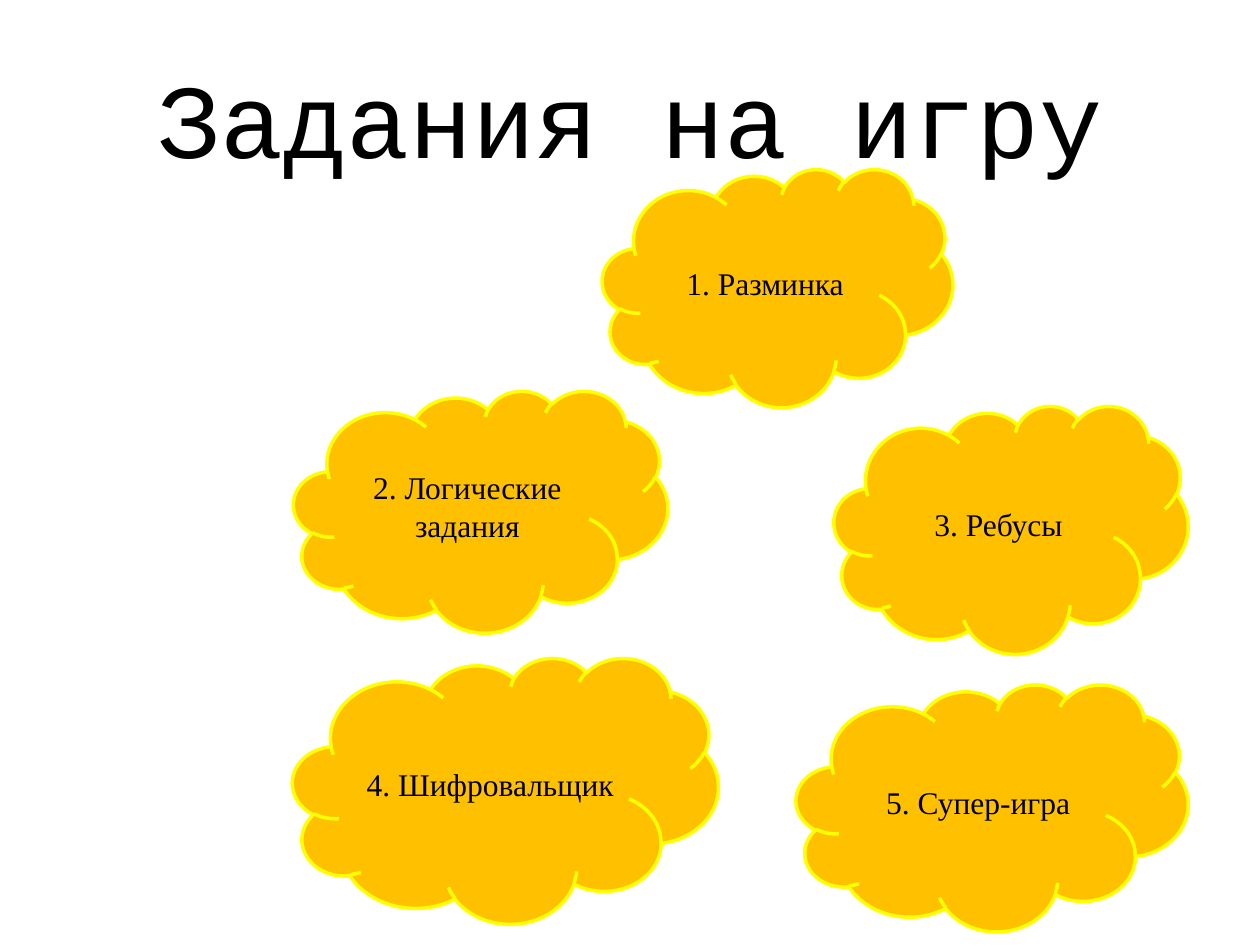
"""Build the slide that lists the five rounds of the game."""
from dataclasses import dataclass

from pptx import Presentation
from pptx.dml.color import RGBColor
from pptx.enum import shapes, text
from pptx.util import Pt


@dataclass(frozen=True)
class Theme:
    ink: RGBColor = RGBColor(0, 0, 0)
    fill: RGBColor = RGBColor(0xFF, 0xC0, 0)
    edge: RGBColor = RGBColor(0xFF, 0xFF, 0)
    line: float = 2
    head: str = "Courier New"
    body: str = "Times New Roman"
    large: float = 60
    small: float = 18


THEME = Theme()

ROUNDS = [
    ("1. Разминка", 344.2, 96.5, 200.2, 136.1),
    ("2. Логические задания", 167.8, 223.2, 213.8, 138.2),
    ("3. Ребусы", 476.6, 231.8, 202.3, 141.8),
    ("4. Шифровальщик", 167.2, 375.8, 243.3, 151.9),
    ("5. Супер-игра", 455, 391, 223.9, 141.1),
]


def write(shape, words, name, size):
    frame = shape.text_frame
    frame.word_wrap = True
    frame.vertical_anchor = text.MSO_ANCHOR.MIDDLE
    para = frame.paragraphs[0]
    para.text = words
    para.alignment = text.PP_ALIGN.CENTER
    para.font.name = name
    para.font.size = Pt(size)
    para.font.color.rgb = THEME.ink


def title(slide, words, *box):
    shape = slide.shapes.add_textbox(*map(Pt, box))
    write(shape, words, THEME.head, THEME.large)


def cloud(slide, words, *box):
    shape = slide.shapes.add_shape(shapes.MSO_SHAPE.CLOUD, *map(Pt, box))
    shape.shadow.inherit = False
    shape.fill.solid()
    shape.fill.fore_color.rgb = THEME.fill
    shape.line.color.rgb = THEME.edge
    shape.line.width = Pt(THEME.line)
    write(shape, words, THEME.body, THEME.small)


def main():
    deck = Presentation()
    deck.slide_width, deck.slide_height = Pt(720), Pt(540)
    slide = deck.slides.add_slide(deck.slide_layouts[6])
    title(slide, "Задания на игру", 36, 21.6, 648, 90)
    for item in ROUNDS:
        cloud(slide, *item)
    deck.save("out.pptx")


if __name__ == "__main__":
    main()
